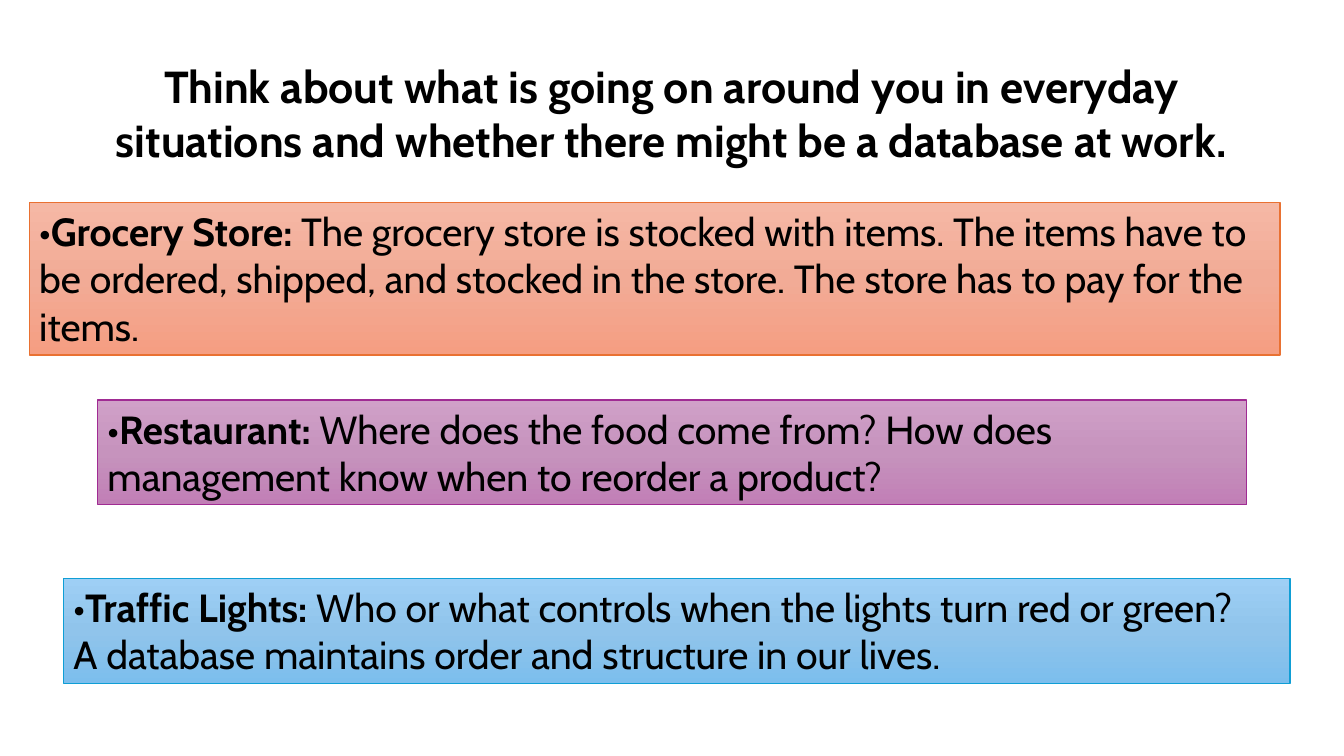
from copy import deepcopy
from dataclasses import dataclass

from pptx import Presentation
from pptx.dml.color import RGBColor
from pptx.enum.shapes import MSO_SHAPE
from pptx.enum.text import MSO_ANCHOR, PP_ALIGN
from pptx.oxml.ns import qn
from pptx.util import Cm, Pt

RECTANGLE = MSO_SHAPE.RECTANGLE
TOP = MSO_ANCHOR.TOP
LEFT, CENTER = PP_ALIGN.LEFT, PP_ALIGN.CENTER
FONT = "Cabin"
BLACK = "000000"
BLANK_LAYOUT = 6


@dataclass
class Situation:
    name: str
    lines: list[str]
    left: float
    top: float
    width: float
    height: float
    gradient: list[str]
    outline: str


SITUATIONS = [
    Situation(
        "Grocery Store",
        ["The grocery store is stocked with items. The items have to be ordered, "
         "shipped, and stocked in the store. The store has to pay for the items."],
        0.74, 5.11, 31.52, 3.84, ["F5B8A5", "F2AB96", "F59E82"], "E97132"),
    Situation(
        "Restaurant",
        ["Where does the food come from? How does management know when to "
         "reorder a product?"],
        2.46, 10.08, 28.96, 2.64, ["D0A0C8", "C693BD", "C17FB6"], "A02B93"),
    Situation(
        "Traffic Lights",
        ["Who or what controls when the lights turn red or green?",
         "A database maintains order and structure in our lives."],
        1.6, 14.58, 30.91, 2.64, ["9ECFF5", "90C4EB", "7CBEED"], "0F9ED5"),
]


def color(value: str) -> RGBColor:
    return RGBColor.from_string(value)


def add_text(paragraph, text: str, *, size: float, bold: bool = False,
             align=LEFT) -> None:
    paragraph.alignment = align
    run = paragraph.add_run()
    run.text = text
    run.font.name = FONT
    run.font.size = Pt(size)
    run.font.bold = bold
    run.font.color.rgb = color(BLACK)


def fill_downward(shape, colors: list[str]) -> None:
    """Fill with a top-to-bottom gradient of three evenly spaced colours."""
    shape.fill.gradient()
    shape.fill.gradient_angle = 270
    stop_list = shape.element.spPr.find(qn("a:gradFill")).find(qn("a:gsLst"))
    stop_list.insert(1, deepcopy(stop_list[0]))
    for index, stop in enumerate(shape.fill.gradient_stops):
        stop.position = index / (len(colors) - 1)
        stop.color.rgb = color(colors[index])


def add_title(slide, text: str) -> None:
    box = slide.shapes.add_textbox(Cm(1.6), Cm(1.35), Cm(30.66), Cm(3))
    box.text_frame.word_wrap = True
    add_text(box.text_frame.paragraphs[0], text, size=32, bold=True, align=CENTER)


def add_situation(slide, situation: Situation) -> None:
    shape = slide.shapes.add_shape(
        RECTANGLE, Cm(situation.left), Cm(situation.top),
        Cm(situation.width), Cm(situation.height))
    shape.shadow.inherit = False
    fill_downward(shape, situation.gradient)
    shape.line.color.rgb = color(situation.outline)
    shape.line.width = Pt(1)

    frame = shape.text_frame
    frame.word_wrap = True
    frame.vertical_anchor = TOP
    first = frame.paragraphs[0]
    add_text(first, f"•{situation.name}: ", size=28, bold=True)
    add_text(first, situation.lines[0], size=28)
    for line in situation.lines[1:]:
        add_text(frame.add_paragraph(), line, size=28)


def main() -> None:
    presentation = Presentation()
    presentation.slide_width = Cm(33.87)
    presentation.slide_height = Cm(19.05)
    slide = presentation.slides.add_slide(presentation.slide_layouts[BLANK_LAYOUT])
    add_title(slide, "Think about what is going on around you in everyday situations "
                     "and whether there might be a database at work.")
    for situation in SITUATIONS:
        add_situation(slide, situation)
    presentation.save("out.pptx")


if __name__ == "__main__":
    main()
